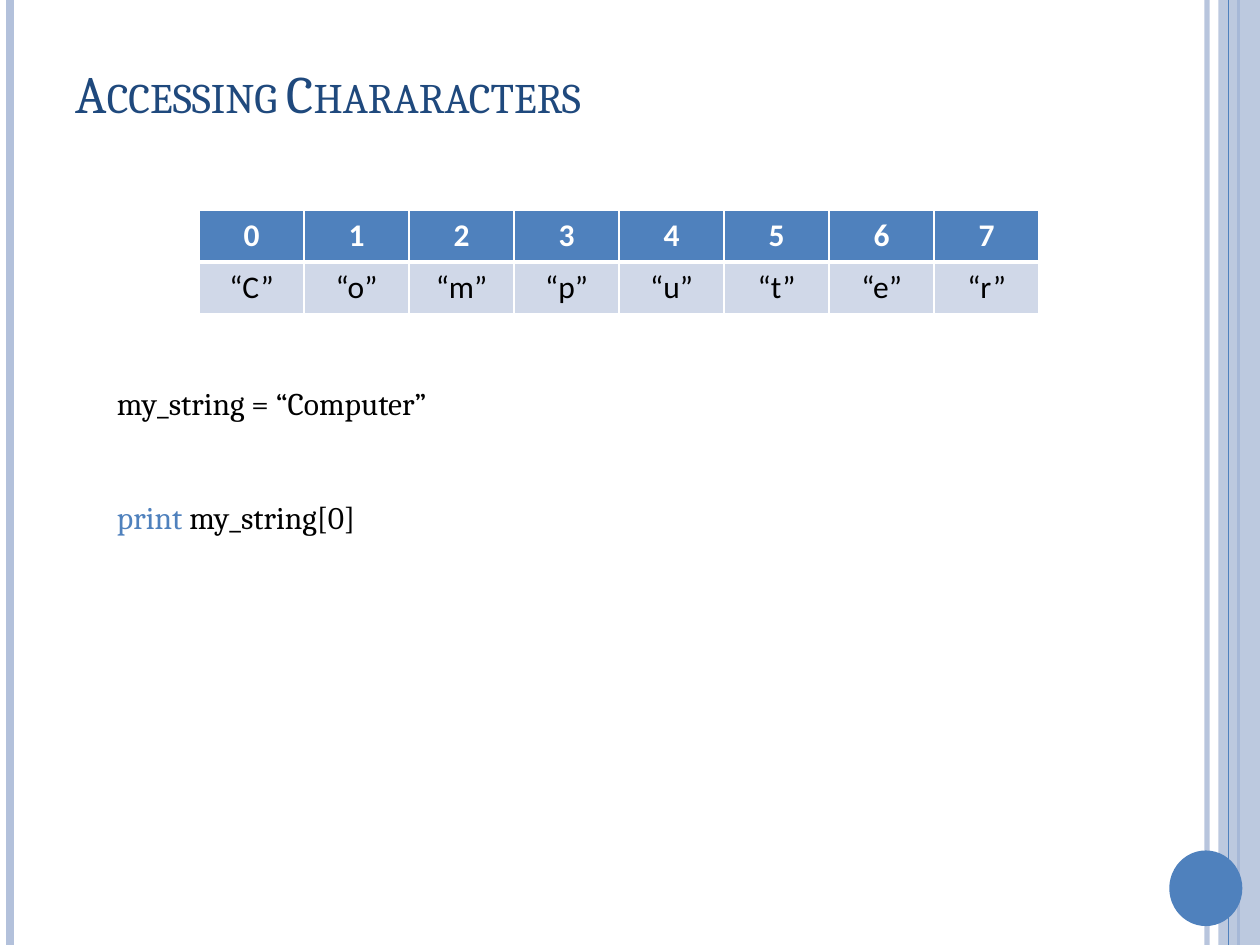
import dataclasses

import pptx
import pptx.dml.color
import pptx.enum.shapes
import pptx.enum.text
import pptx.oxml
import pptx.oxml.ns
import pptx.shapes.autoshape
import pptx.slide
import pptx.table
import pptx.text.text
import pptx.util

Inches = pptx.util.Inches
Pt = pptx.util.Pt
qn = pptx.oxml.ns.qn


@dataclasses.dataclass(frozen=True)
class Theme:
    heading_font: str = "Cambria"
    table_font: str = "Calibri"
    title_size: float = 30
    body_size: float = 18
    accent: str = "4F81BD"
    pale: str = "B3C1DB"
    cell: str = "D0D8E8"
    title: str = "1F497D"
    black: str = "000000"
    white: str = "FFFFFF"


THEME = Theme()
SLIDE_WIDTH, SLIDE_HEIGHT = 10, 7.5


@dataclasses.dataclass(frozen=True)
class Stripe:
    x: float
    width: float
    color: str
    opacity: int = 100


@dataclasses.dataclass(frozen=True)
class TableRow:
    texts: list[str]
    fill: str
    color: str
    bold: bool
    top_border: float
    bottom_border: float


STRIPES_BEHIND_BAND = [
    Stripe(9.58, 3, THEME.pale, 93),
    Stripe(0.08, 4.5, THEME.pale),
    Stripe(9.83, 1.5, THEME.accent),
]
STRIPE_ON_BAND = Stripe(9.75, 0.75, THEME.accent)
WORD = "Computer"
ROWS = [
    TableRow([str(index) for index in range(len(WORD))],
             THEME.accent, THEME.white, True, 1, 3),
    TableRow([f"“{letter}”" for letter in WORD],
             THEME.cell, THEME.black, False, 3, 1),
]


def rgb(color: str) -> pptx.dml.color.RGBColor:
    return pptx.dml.color.RGBColor.from_string(color)


def set_opacity(element, percent: int) -> None:
    color = next(element.iter(qn("a:srgbClr")))
    pptx.oxml.ns  # namespace helpers supply the tag below
    alpha = color.makeelement(qn("a:alpha"), {"val": str(percent * 1000)})
    color.append(alpha)


def add_stripe(slide: pptx.slide.Slide, stripe: Stripe) -> None:
    connector = slide.shapes.add_connector(
        pptx.enum.shapes.MSO_CONNECTOR.STRAIGHT,
        Inches(stripe.x), Inches(0), Inches(stripe.x), Inches(SLIDE_HEIGHT))
    connector.line.color.rgb = rgb(stripe.color)
    connector.line.width = Pt(stripe.width)
    properties = connector.element.spPr
    if stripe.opacity < 100:
        set_opacity(properties, stripe.opacity)
    properties.append(properties.makeelement(qn("a:effectLst"), {}))


def add_plain_shape(slide: pptx.slide.Slide, kind: pptx.enum.shapes.MSO_SHAPE,
                    left: float, top: float, width: float, height: float,
                    color: str) -> pptx.shapes.autoshape.Shape:
    shape = slide.shapes.add_shape(
        kind, Inches(left), Inches(top), Inches(width), Inches(height))
    shape.shadow.inherit = False
    shape.fill.solid()
    shape.fill.fore_color.rgb = rgb(color)
    shape.line.fill.background()
    return shape


def add_text_frame(slide: pptx.slide.Slide, left: float, top: float,
                   width: float, height: float) -> pptx.text.text.TextFrame:
    frame = slide.shapes.add_textbox(
        Inches(left), Inches(top), Inches(width), Inches(height)).text_frame
    frame.word_wrap = True
    return frame


def style(run, font: str, size: float, color: str, bold: bool = False) -> None:
    run.font.name = font
    run.font.size = Pt(size)
    run.font.color.rgb = rgb(color)
    run.font.bold = bold


def add_title(slide: pptx.slide.Slide) -> None:
    frame = add_text_frame(slide, 0.5, 0.3, 8.67, 0.87)
    frame.vertical_anchor = pptx.enum.text.MSO_ANCHOR.MIDDLE
    frame.text = "Accessing Chararacters"
    title = frame.paragraphs[0].runs[0]
    style(title, THEME.heading_font, THEME.title_size, THEME.title)
    next(frame.paragraphs[0]._p.iter(qn("a:rPr"))).set("cap", "small")


def set_borders(cell: pptx.table._Cell, row: TableRow) -> None:
    """Put white lines around a cell, ahead of its fill as the schema asks."""
    properties = cell._tc.get_or_add_tcPr()
    widths = {"L": 1, "R": 1, "T": row.top_border, "B": row.bottom_border}
    for position, (side, width) in enumerate(widths.items()):
        border = pptx.oxml.parse_xml(
            f'<a:ln{side} {pptx.oxml.ns.nsdecls("a")} w="{Pt(width)}">'
            f'<a:solidFill><a:srgbClr val="{THEME.white}"/></a:solidFill>'
            f'</a:ln{side}>')
        properties.insert(position, border)


def add_index_table(slide: pptx.slide.Slide) -> None:
    width, row_height = 6.67, 0.41
    table = slide.shapes.add_table(
        len(ROWS), len(WORD), Inches(1.58), Inches(1.67),
        Inches(width), Inches(row_height * len(ROWS))).table
    for column in table.columns:
        column.width = Inches(width / len(WORD))
    for row_index, row in enumerate(ROWS):
        table.rows[row_index].height = Inches(row_height)
        for column_index, text in enumerate(row.texts):
            cell = table.cell(row_index, column_index)
            cell.fill.solid()
            cell.fill.fore_color.rgb = rgb(row.fill)
            set_borders(cell, row)
            cell.text_frame.text = text
            paragraph = cell.text_frame.paragraphs[0]
            paragraph.alignment = pptx.enum.text.PP_ALIGN.CENTER
            style(paragraph.runs[0], THEME.table_font, THEME.body_size,
                  row.color, row.bold)


def add_code(slide: pptx.slide.Slide) -> None:
    frame = add_text_frame(slide, 0.83, 3, 8.08, 1.31)
    frame.text = "my_string = “Computer”"
    assignment = frame.paragraphs[0].runs[0]
    style(assignment, THEME.heading_font, THEME.body_size, THEME.black)
    output = frame.add_paragraph()
    output.space_before = Pt(43.4)
    for text, color in [("print ", THEME.accent), ("my_string[0]", THEME.black)]:
        run = output.add_run()
        run.text = text
        style(run, THEME.heading_font, THEME.body_size, color)


def main() -> None:
    presentation = pptx.Presentation()
    presentation.slide_width = Inches(SLIDE_WIDTH)
    presentation.slide_height = Inches(SLIDE_HEIGHT)
    slide = presentation.slides.add_slide(presentation.slide_layouts[6])

    for stripe in STRIPES_BEHIND_BAND:
        add_stripe(slide, stripe)
    band = add_plain_shape(slide, pptx.enum.shapes.MSO_SHAPE.RECTANGLE,
                           9.67, 0, 0.33, SLIDE_HEIGHT, THEME.pale)
    set_opacity(band.element.spPr, 87)
    add_stripe(slide, STRIPE_ON_BAND)
    add_plain_shape(slide, pptx.enum.shapes.MSO_SHAPE.OVAL,
                    9.28, 6.75, 0.58, 0.6, THEME.accent)

    add_title(slide)
    add_index_table(slide)
    add_code(slide)
    presentation.save("out.pptx")


if __name__ == "__main__":
    main()
